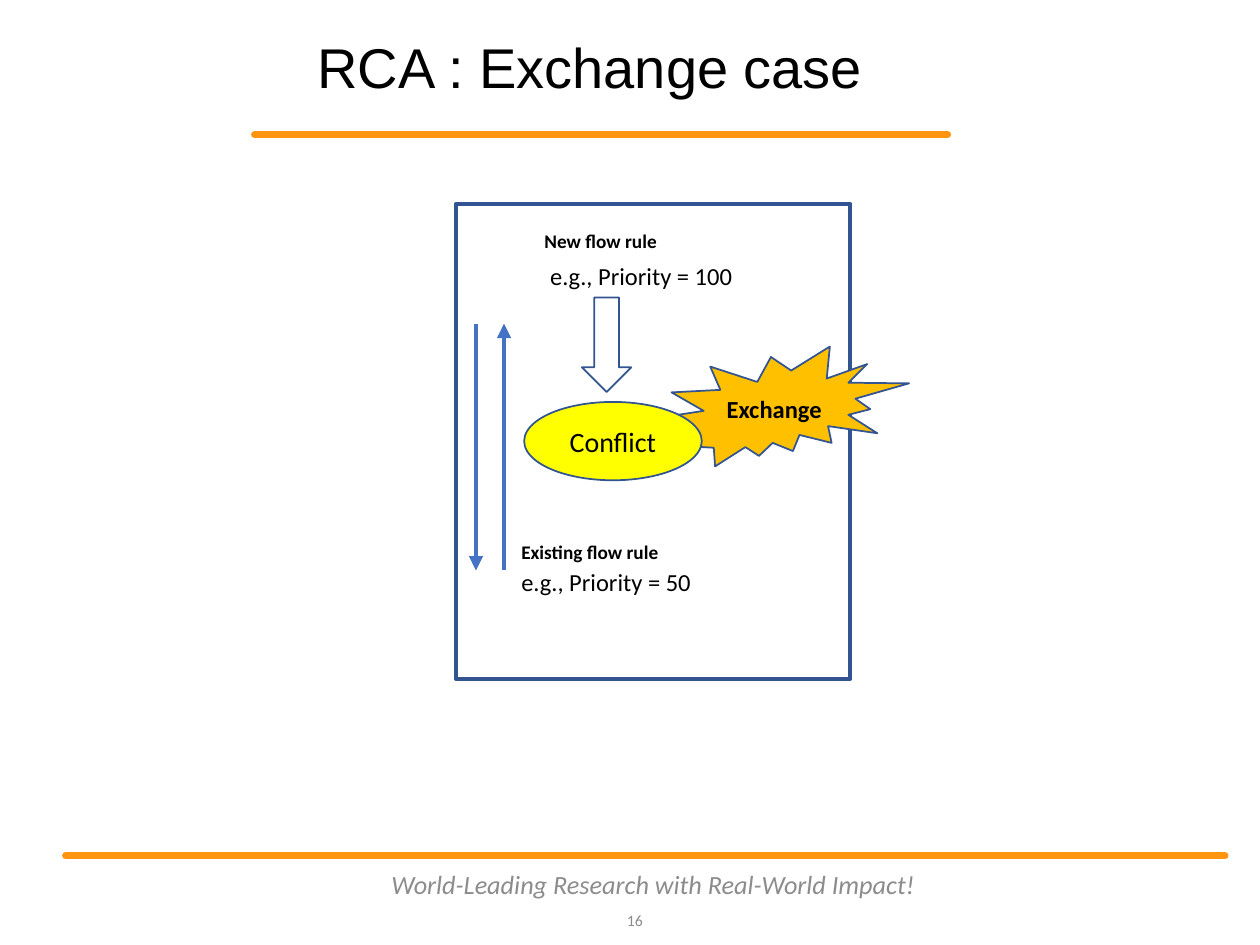
from dataclasses import dataclass
from typing import Optional

from lxml.etree import SubElement
from pptx import Presentation
from pptx.dml.color import RGBColor
from pptx.enum.shapes import MSO_CONNECTOR, MSO_SHAPE
from pptx.enum.text import MSO_ANCHOR, PP_ALIGN
from pptx.oxml.ns import qn
from pptx.util import Pt


@dataclass(frozen=True)
class Theme:
    accent: str = "FF950E"
    outline: str = "325491"
    arrow: str = "4472C4"
    seal: str = "FFC000"
    conflict: str = "FFFF00"
    white: str = "FFFFFF"
    black: str = "000000"
    muted: str = "8C8C8C"
    title_font: str = "Arial"
    body_font: str = "Calibri"
    title_size: float = 32
    conflict_size: float = 16
    motto_size: float = 15
    body_size: float = 14
    label_size: float = 11
    number_size: float = 9
    rule_width: float = 4
    frame_width: float = 2.25
    arrow_width: float = 2.75
    shape_width: float = 1


THEME = Theme()


@dataclass(frozen=True)
class Box:
    left: float
    top: float
    width: float
    height: float

    def lengths(self) -> tuple:
        return Pt(self.left), Pt(self.top), Pt(self.width), Pt(self.height)


@dataclass(frozen=True)
class Label:
    text: str
    size: float = THEME.body_size
    bold: bool = False
    italic: bool = False
    color: str = THEME.black
    font: str = THEME.body_font
    align: PP_ALIGN = PP_ALIGN.LEFT
    anchor: MSO_ANCHOR = MSO_ANCHOR.TOP
    spacing: float = 1.0
    inset: Optional[float] = None


@dataclass(frozen=True)
class Figure:
    kind: MSO_SHAPE
    box: Box
    fill: Optional[str] = None
    line_width: float = THEME.shape_width
    label: Optional[Label] = None


@dataclass(frozen=True)
class Line:
    start: tuple
    end: tuple
    color: str
    width: float
    arrow_end: Optional[str] = None


def write_label(shape, label: Label) -> None:
    frame = shape.text_frame
    frame.word_wrap = True
    frame.vertical_anchor = label.anchor
    if label.inset is not None:
        for side in ("left", "top", "right", "bottom"):
            setattr(frame, f"margin_{side}", Pt(label.inset))
    paragraph = frame.paragraphs[0]
    paragraph.alignment = label.align
    paragraph.line_spacing = label.spacing
    run = paragraph.add_run()
    run.text = label.text
    formats = {
        "name": label.font,
        "size": Pt(label.size),
        "bold": label.bold,
        "italic": label.italic,
    }
    for name, value in formats.items():
        setattr(run.font, name, value)
    run.font.color.rgb = RGBColor.from_string(label.color)


def draw_text(slide, box: Box, label: Label) -> None:
    write_label(slide.shapes.add_textbox(*box.lengths()), label)


def draw_figure(slide, figure: Figure) -> None:
    shape = slide.shapes.add_shape(figure.kind, *figure.box.lengths())
    shape.shadow.inherit = False
    if figure.fill:
        shape.fill.solid()
        shape.fill.fore_color.rgb = RGBColor.from_string(figure.fill)
    else:
        shape.fill.background()
    shape.line.color.rgb = RGBColor.from_string(THEME.outline)
    shape.line.width = Pt(figure.line_width)
    if figure.label:
        write_label(shape, figure.label)


def draw_line(slide, line: Line) -> None:
    points = [Pt(value) for value in line.start + line.end]
    connector = slide.shapes.add_connector(MSO_CONNECTOR.STRAIGHT, *points)
    connector.line.color.rgb = RGBColor.from_string(line.color)
    connector.line.width = Pt(line.width)
    properties = connector.line._get_or_add_ln()
    if line.arrow_end:
        SubElement(properties, qn(f"a:{line.arrow_end}"), type="triangle")
    else:
        properties.set("cap", "rnd")
    SubElement(connector._element.spPr, qn("a:effectLst"))


RULES = [
    Line((145.5, 77), (541.5, 77), THEME.accent, THEME.rule_width),
    Line((37.5, 489), (700, 489), THEME.accent, THEME.rule_width),
]
FLOW_ARROWS = [
    Line((x, 185), (x, 326), THEME.arrow, THEME.arrow_width, end)
    for x, end in ((272, "tailEnd"), (288, "headEnd"))
]
CENTERED = {"align": PP_ALIGN.CENTER, "anchor": MSO_ANCHOR.MIDDLE}
FIGURES = [
    Figure(MSO_SHAPE.RECTANGLE, Box(260.5, 116.5, 225.5, 271.5),
           line_width=THEME.frame_width),
    Figure(MSO_SHAPE.EXPLOSION2, Box(376, 198, 143.5, 68.5), THEME.seal,
           label=Label("Exchange", bold=True, inset=0, **CENTERED)),
    Figure(MSO_SHAPE.OVAL, Box(299.5, 229.7, 101.5, 44.8), THEME.conflict,
           label=Label("Conflict", THEME.conflict_size, **CENTERED)),
    Figure(MSO_SHAPE.DOWN_ARROW, Box(332.5, 170, 28.2, 54), THEME.white),
]
TEXTS = [
    (Box(143.3, 24.5, 388, 36.7),
     Label("RCA : Exchange case", THEME.title_size, font=THEME.title_font,
           align=PP_ALIGN.CENTER, anchor=MSO_ANCHOR.BOTTOM, spacing=0.9)),
    (Box(345.6, 511.2, 28.8, 28.8),
     Label("16", THEME.number_size, color=THEME.muted,
           align=PP_ALIGN.RIGHT, anchor=MSO_ANCHOR.MIDDLE)),
    (Box(216, 491, 314.6, 28.8),
     Label("World-Leading Research with Real-World Impact!", THEME.motto_size,
           italic=True, color=THEME.muted, **CENTERED)),
    (Box(304, 127.5, 100, 21), Label("New flow rule", THEME.label_size, bold=True)),
    (Box(307.3, 145.5, 122.5, 24.5), Label("e.g., Priority = 100")),
    (Box(290.8, 305.3, 100, 21), Label("Existing flow rule", THEME.label_size, bold=True)),
    (Box(290.8, 320.5, 129.6, 24.5), Label("e.g., Priority = 50")),
]


def main() -> None:
    presentation = Presentation()
    presentation.slide_width = Pt(720)
    presentation.slide_height = Pt(540)
    slide = presentation.slides.add_slide(presentation.slide_layouts[6])
    for rule in RULES:
        draw_line(slide, rule)
    for figure in FIGURES:
        draw_figure(slide, figure)
    for arrow in FLOW_ARROWS:
        draw_line(slide, arrow)
    for box, label in TEXTS:
        draw_text(slide, box, label)
    presentation.save("out.pptx")


if __name__ == "__main__":
    main()
